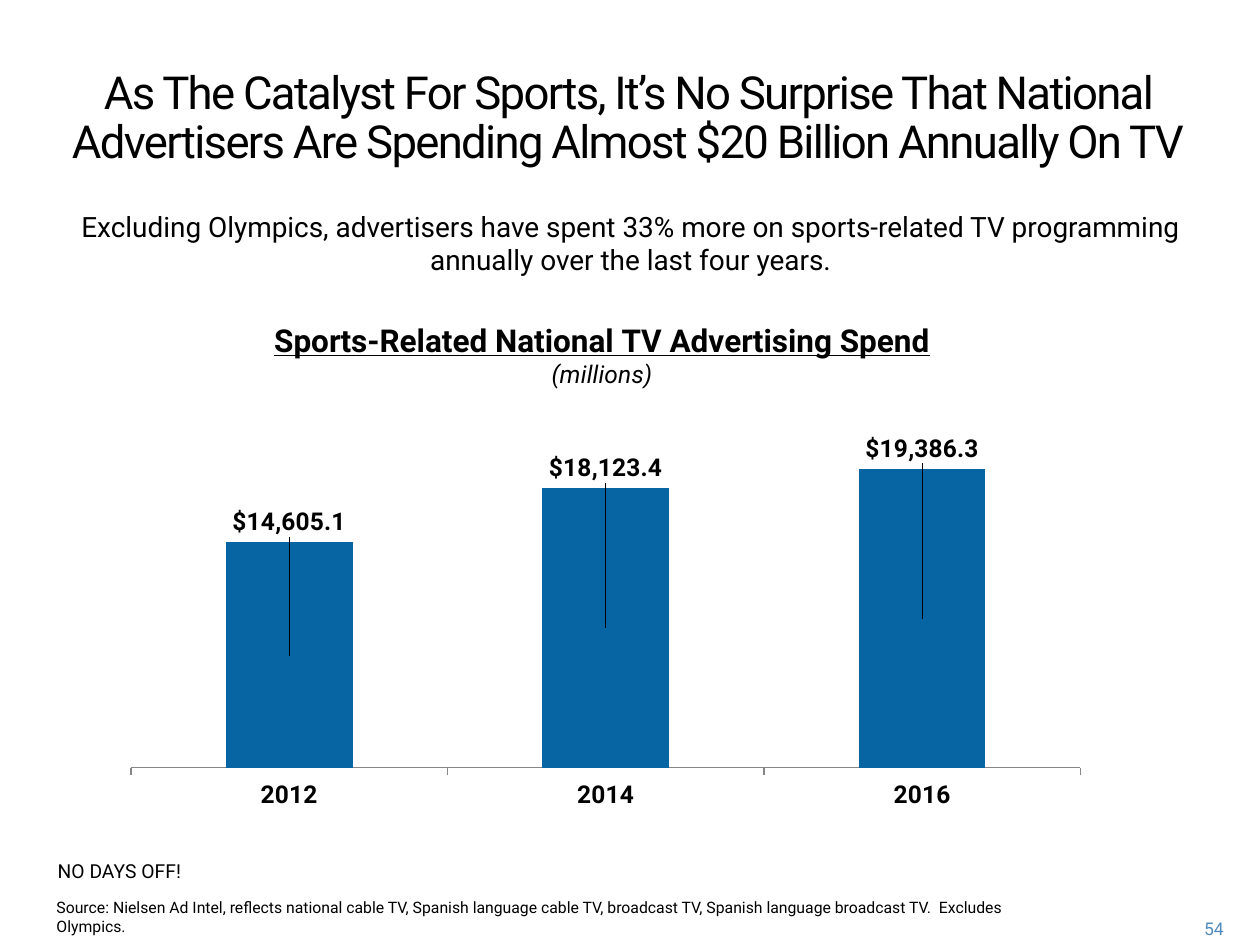
from dataclasses import dataclass

from lxml.etree import SubElement
from pptx import Presentation
from pptx.chart.data import CategoryChartData
from pptx.dml.color import RGBColor
from pptx.enum.chart import XL_CHART_TYPE, XL_LABEL_POSITION, XL_TICK_MARK
from pptx.enum.text import MSO_ANCHOR, MSO_AUTO_SIZE, PP_ALIGN
from pptx.oxml import parse_xml
from pptx.oxml.ns import nsdecls, qn
from pptx.util import Inches, Pt


@dataclass(frozen=True)
class Theme:
    face: str = "Roboto"
    ink: str = "000000"
    bar: str = "0765A3"
    axis: str = "868686"
    page: str = "508ABA"
    title: float = 26
    lead: float = 16
    head: float = 18
    label: float = 14
    base: float = 11
    number: float = 10
    note: float = 9


@dataclass(frozen=True)
class Block:
    text: str
    box: tuple
    size: float
    color: str
    align: PP_ALIGN = PP_ALIGN.LEFT


THEME = Theme()
MONEY = '"$"#,##0.0'
YEARS = ("2012", "2014", "2016")
SPEND = (14605.1, 18123.4, 19386.3)
TOP = 25000            # value axis maximum
PLOT = (0.019, 0.198, 0.96, 0.704)  # plot area as shares of the chart
LIFT = 0.036           # label centre above bar top, same unit

TITLE = Block("As The Catalyst For Sports, It’s No Surprise That National "
              "Advertisers Are Spending Almost $20 Billion Annually On TV",
              (0.08, 0.5, 9.81, 0.68), THEME.title, THEME.ink, PP_ALIGN.CENTER)
LEAD = Block("Excluding Olympics, advertisers have spent 33% more on "
             "sports-related TV programming annually over the last four years.",
             (0.19, 1.61, 9.63, 0.4), THEME.lead, THEME.ink, PP_ALIGN.CENTER)
NOTES = (
    Block("Source: Nielsen Ad Intel, reflects national cable TV, Spanish "
          "language cable TV, broadcast TV, Spanish language broadcast TV.  "
          "Excludes Olympics.",
          (0.35, 7.08, 7.9, 0.26), THEME.note, THEME.ink),
    Block("NO DAYS OFF!", (0.36, 6.77, 1.88, 0.47), THEME.base, THEME.ink),
    Block("54", (9.2, 7.24, 0.61, 0.25), THEME.number, THEME.page,
          PP_ALIGN.RIGHT),
)


def style(font, size: float, color: str = THEME.ink, bold: bool = False) -> None:
    font.name, font.size, font.bold = THEME.face, Pt(size), bold
    font.color.rgb = RGBColor.from_string(color)


def write(shape, block: Block) -> None:
    """Place a text shape and fill it with one paragraph."""
    shape.left, shape.top, shape.width, shape.height = map(Inches, block.box)
    frame = shape.text_frame
    frame.text = block.text
    frame.word_wrap = True
    frame.auto_size = MSO_AUTO_SIZE.NONE
    frame.vertical_anchor = MSO_ANCHOR.TOP
    para = frame.paragraphs[0]
    para.alignment, para.space_before = block.align, Pt(0)
    style(para.font, block.size, block.color)


def place(node, index: int, **parts) -> None:
    """Give a chart part a manual layout."""
    for old in node.findall(qn("c:layout")):
        node.remove(old)
    layout = parse_xml(f"<c:layout {nsdecls('c')}><c:manualLayout/></c:layout>")
    for tag, val in parts.items():
        SubElement(layout[0], qn(f"c:{tag}")).set("val", str(val))
    node.insert(index, layout)


def head(chart) -> None:
    """Two-line chart title."""
    frame = chart.chart_title.text_frame
    frame.text = "Sports-Related National TV Advertising Spend\n(millions)"
    first, unit = frame.paragraphs
    style(first.font, THEME.head, bold=True)
    first.font.underline = True
    style(unit.font, THEME.label)
    unit.font.italic = True
    place(chart.chart_title._element, 1,
          xMode="edge", yMode="edge", x=0.16, y=0.08)


def label(point, value: float) -> None:
    """Move the value label from the bar's middle to just above it."""
    tag = point.data_label
    style(tag.font, THEME.label, bold=True)
    tag.position = XL_LABEL_POSITION.CENTER
    node = tag._get_or_add_dLbl()
    shift = round(-(value / TOP * PLOT[3] / 2 + LIFT), 3)
    place(node, 1, x=0, y=shift)
    form = parse_xml(f"<c:numFmt {nsdecls('c')} sourceLinked='0'/>")
    form.set("formatCode", MONEY)
    node.insert(2, form)


def draw(slide) -> None:
    data = CategoryChartData(number_format=MONEY)
    data.categories = YEARS
    data.add_series("Series 1", SPEND)
    box = map(Inches, (0.89, 2.17, 7.85, 4.35))
    chart = slide.shapes.add_chart(XL_CHART_TYPE.COLUMN_STACKED, *box, data).chart
    style(chart.font, THEME.base)
    chart.has_legend = False
    head(chart)

    # Axes
    years, money = chart.category_axis, chart.value_axis
    style(years.tick_labels.font, THEME.label, bold=True)
    years.major_tick_mark = XL_TICK_MARK.OUTSIDE
    years.format.line.color.rgb = RGBColor.from_string(THEME.axis)
    money.minimum_scale, money.maximum_scale = 0, TOP
    money.has_major_gridlines = money.visible = False
    money.tick_labels.number_format = MONEY
    money.tick_labels.number_format_is_linked = False

    # Bars and their labels
    plot = chart.plots[0]
    plot.gap_width, plot.overlap = 150, 100
    plot.vary_by_categories = False
    bars = plot.series[0]
    bars.format.fill.solid()
    bars.format.fill.fore_color.rgb = RGBColor.from_string(THEME.bar)
    tags = bars.data_labels
    tags.show_value = True
    tags.number_format, tags.number_format_is_linked = MONEY, False
    style(tags.font, THEME.label, bold=True)
    for i, value in enumerate(SPEND):
        label(bars.points[i], value)

    x, y, w, h = PLOT
    area = chart._chartSpace.chart.plotArea
    place(area, 0, layoutTarget="inner", xMode="edge", yMode="edge",
          x=x, y=y, w=w, h=h)


def main() -> None:
    deck = Presentation()
    deck.slide_width, deck.slide_height = Inches(10), Inches(7.5)
    slide = deck.slides.add_slide(deck.slide_layouts[0])

    # Title and lead text
    title = slide.shapes.title
    write(title, TITLE)
    para = title.text_frame.paragraphs[0]
    para.line_spacing = Pt(28)
    para.runs[0]._r.get_or_add_rPr().set("spc", "-100")
    write(slide.placeholders[1], LEAD)

    draw(slide)

    # Notes and page number
    for note in NOTES:
        write(slide.shapes.add_textbox(0, 0, 0, 0), note)
    deck.save("out.pptx")


if __name__ == "__main__":
    main()
